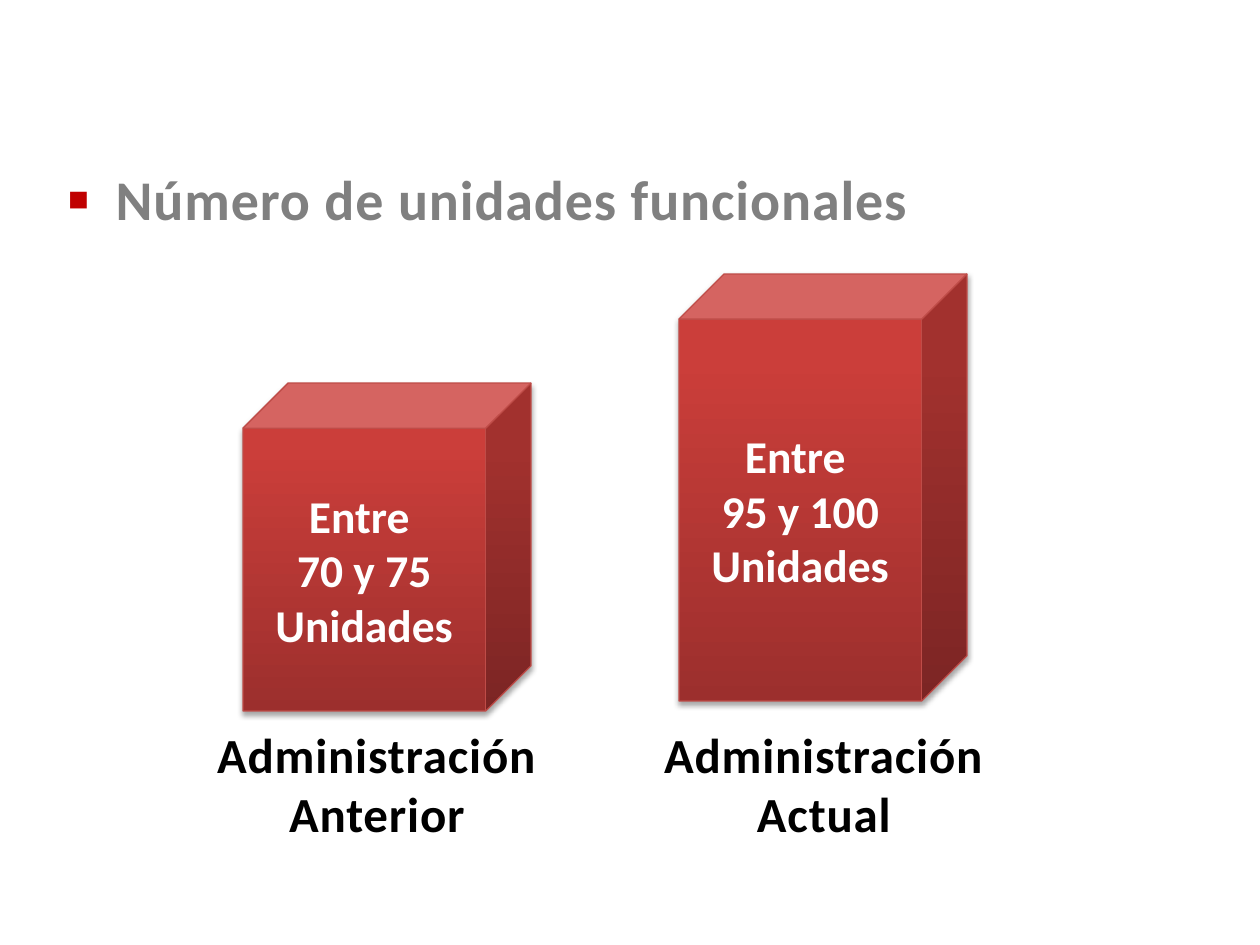
from lxml.etree import SubElement
from pptx import Presentation
from pptx.dml.color import RGBColor
from pptx.enum.shapes import MSO_SHAPE
from pptx.enum.text import MSO_ANCHOR, MSO_AUTO_SIZE, PP_ALIGN
from pptx.oxml.ns import qn
from pptx.util import Pt

HEAD = "Número de unidades funcionales"
# label, label left, cube lines, cube left, top, height
BARS = [
    ("Administración Anterior", 203, ["Entre ", "70 y 75 Unidades"], 243, 383, 328),
    ("Administración Actual", 650, ["Entre ", "95 y 100 Unidades"], 679, 274, 427),
]
HUES = {"head": "808080", "mark": "C00000", "label": "000000",
        "text": "FFFFFF", "edge": "BF4C48", "shade": "000000"}
FADE = [(0, "9C2F2D"), (80, "CB3E3A"), (100, "CE3B37")]
FONT = "Calibri"
SCALE = 914400 / 126


def px(*sizes):
    return [round(size * SCALE) for size in sizes]


def node(parent, tag, **attrs):
    return SubElement(parent, qn("a:" + tag), {k: str(v) for k, v in attrs.items()})


def write(para, text, size, hue, align, gap=0):
    """Add one bold run; gap is letter spacing in hundredths of a point."""
    para.alignment = align
    run = para.add_run()
    run.text = text
    font = run.font
    font.name, font.size, font.bold = FONT, Pt(size), True
    font.color.rgb = RGBColor.from_string(HUES[hue])
    if gap:
        font._element.set("spc", str(gap))


def add_head(slide):
    title = slide.shapes.title
    title.left, title.top, title.width, title.height = px(54, 125, 1160, 105)
    frame = title.text_frame
    frame.vertical_anchor = MSO_ANCHOR.TOP
    frame.auto_size = MSO_AUTO_SIZE.NONE
    para = frame.paragraphs[0]
    para.line_spacing = 1.5
    write(para, HEAD, 32, "head", PP_ALIGN.JUSTIFY, 50)
    props = para._p.get_or_add_pPr()
    indent = px(49)[0]
    props.set("marL", str(indent))
    props.set("indent", str(-indent))
    node(node(props, "buClr"), "srgbClr", val=HUES["mark"])
    node(props, "buSzPct", val=120000)
    node(props, "buFont", typeface="Arial")
    node(props, "buChar", char="▪")


def add_label(slide, text, left):
    frame = slide.shapes.add_textbox(*px(left, 718, 348, 131)).text_frame
    frame.word_wrap = True
    write(frame.paragraphs[0], text, 28, "label", PP_ALIGN.CENTER, 50)


def add_cube(slide, lines, left, top, height):
    cube = slide.shapes.add_shape(MSO_SHAPE.CUBE, *px(left, top, 288, height))
    cube.adjustments[0] = 0.157
    cube.line.color.rgb = RGBColor.from_string(HUES["edge"])
    cube.line.width = Pt(0.75)

    cube.fill.gradient()
    cube.fill.gradient_angle = 90
    stops = cube._element.spPr.find(qn("a:gradFill")).find(qn("a:gsLst"))
    for stop in list(stops):
        stops.remove(stop)
    for place, hue in FADE:
        node(node(stops, "gs", pos=place * 1000), "srgbClr", val=hue)

    cube.shadow.inherit = False
    effects = cube._element.spPr.find(qn("a:effectLst"))
    shade = node(effects, "outerShdw", blurRad=Pt(3.1), dist=Pt(1.8),
                 dir=5400000, rotWithShape=0)
    node(node(shade, "srgbClr", val=HUES["shade"]), "alpha", val=35000)

    frame = cube.text_frame
    frame.word_wrap = True
    frame.vertical_anchor = MSO_ANCHOR.MIDDLE
    for i, line in enumerate(lines):
        para = frame.add_paragraph() if i else frame.paragraphs[0]
        write(para, line, 26, "text", PP_ALIGN.CENTER)


def main():
    deck = Presentation()
    deck.slide_width, deck.slide_height = px(1260, 945)
    slide = deck.slides.add_slide(deck.slide_layouts[5])
    add_head(slide)
    for label, side, lines, left, top, height in BARS:
        add_label(slide, label, side)
        add_cube(slide, lines, left, top, height)
    deck.save("out.pptx")


if __name__ == "__main__":
    main()
